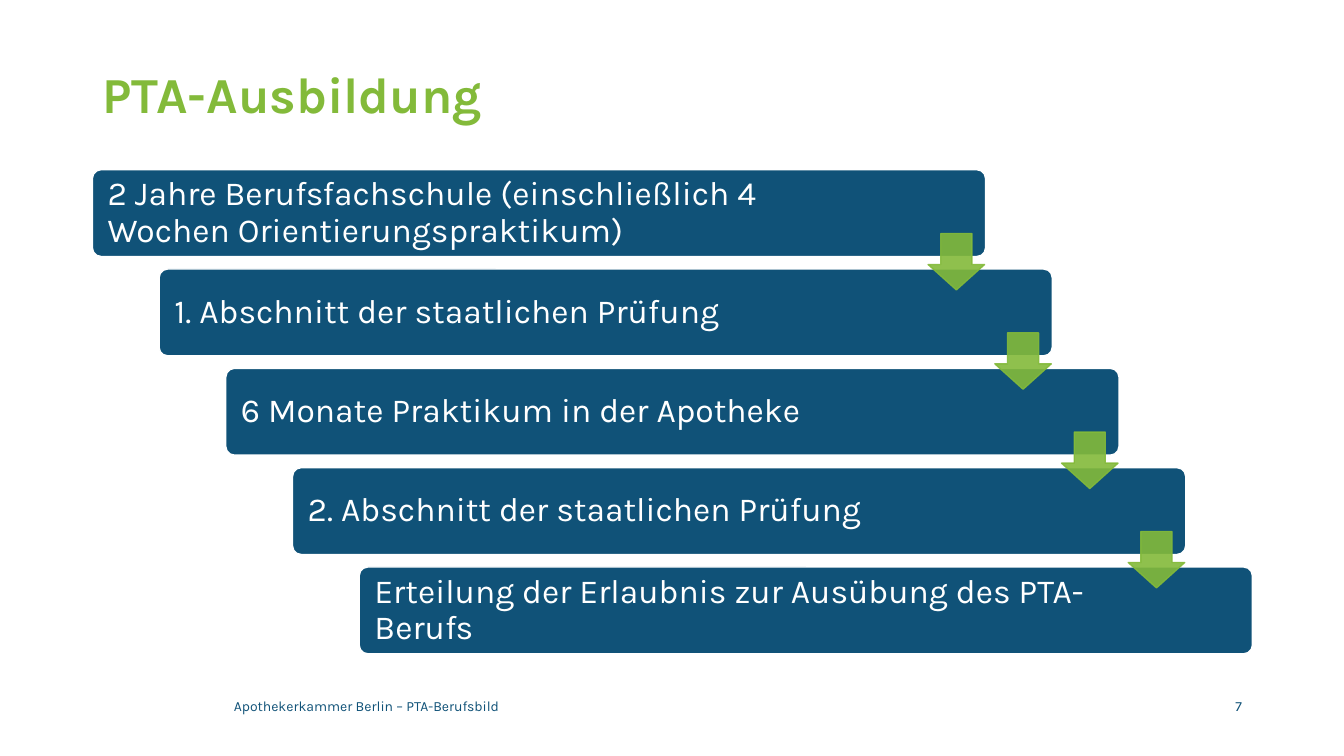
from lxml.etree import SubElement
from pptx import Presentation
from pptx.dml.color import RGBColor
from pptx.enum.shapes import MSO_SHAPE
from pptx.enum.text import MSO_ANCHOR, PP_ALIGN
from pptx.oxml.ns import qn
from pptx.util import Pt

BLUE = RGBColor(0x10, 0x52, 0x78)
GREEN = RGBColor(0x83, 0xBA, 0x3A)
WHITE = RGBColor(0xFF, 0xFF, 0xFF)

STEPS = [
    "2 Jahre Berufsfachschule (einschließlich 4 Wochen Orientierungspraktikum)",
    "1. Abschnitt der staatlichen Prüfung",
    "6 Monate Praktikum in der Apotheke",
    "2. Abschnitt der staatlichen Prüfung",
    "Erteilung der Erlaubnis zur Ausübung des PTA-Berufs",
]
STEP_RIGHT, STEP_DOWN = 47.65, 70.95


def set_all(target, values):
    """Set each named attribute of the target."""
    for name, value in values.items():
        setattr(target, name, value)


def place(shape, left, top, width, height):
    """Move and size a shape, in points."""
    set_all(shape, {"left": Pt(left), "top": Pt(top),
                    "width": Pt(width), "height": Pt(height)})


def write(shape, text, size, color, align=PP_ALIGN.LEFT, spacing=1.0, bold=False):
    """Write one formatted paragraph, vertically centred."""
    frame = shape.text_frame
    set_all(frame, {"word_wrap": True, "vertical_anchor": MSO_ANCHOR.MIDDLE})
    para = frame.paragraphs[0]
    set_all(para, {"alignment": align, "line_spacing": spacing})
    span = para.add_run()
    span.text = text
    set_all(span.font, {"name": "Karla", "size": Pt(size), "bold": bold})
    span.font.color.rgb = color


def add_filled(page, kind, bounds, fill, line, adjustments):
    """Add a preset shape with a solid fill and a thin outline."""
    shape = page.shapes.add_shape(kind, *map(Pt, bounds))
    shape.shadow.inherit = False
    shape.fill.solid()
    shape.fill.fore_color.rgb = fill
    shape.line.color.rgb = line
    shape.line.width = Pt(1)
    for index, value in enumerate(adjustments):
        shape.adjustments[index] = value
    return shape


def add_step(page, index, text):
    """Add one bar of the staircase with its text."""
    bounds = (66 + index * STEP_RIGHT, 121.2 + index * STEP_DOWN, 638, 62)
    bar = add_filled(page, MSO_SHAPE.ROUNDED_RECTANGLE, bounds, BLUE, WHITE, [0.1])
    set_all(bar.text_frame, {"margin_left": Pt(9), "margin_right": Pt(98),
                             "margin_top": Pt(0), "margin_bottom": Pt(0)})
    write(bar, text, 24, WHITE, spacing=0.9)


def add_arrow(page, index):
    """Add the translucent arrow from one bar to the next."""
    bounds = (663 + index * STEP_RIGHT, 166.8 + index * STEP_DOWN, 40.3, 40.3)
    arrow = add_filled(page, MSO_SHAPE.DOWN_ARROW, bounds, GREEN, GREEN, [0.55, 0.45])
    for color in arrow.element.spPr.iter(qn("a:srgbClr")):
        SubElement(color, qn("a:alpha"), val="90000")


def add_note(page, bounds, text, align):
    """Add a small line at the foot of the page."""
    box = page.shapes.add_textbox(*map(Pt, bounds))
    write(box, text, 10, BLUE, align)


def main():
    """Build and save the deck."""
    deck = Presentation()
    set_all(deck, {"slide_width": Pt(960), "slide_height": Pt(540)})
    page = deck.slides.add_slide(deck.slide_layouts[5])
    title = page.shapes.title
    place(title, 66, 28.75, 828, 82)
    write(title, "PTA-Ausbildung", 36, GREEN, spacing=0.9, bold=True)
    for index, text in enumerate(STEPS):
        add_step(page, index, text)
    for index in range(len(STEPS) - 1):
        add_arrow(page, index)
    add_note(page, (160, 489.6, 627, 28.8),
             "Apothekerkammer Berlin – PTA-Berufsbild", PP_ALIGN.LEFT)
    add_note(page, (790.5, 489.6, 103.7, 28.8), "7", PP_ALIGN.RIGHT)
    deck.save("out.pptx")


if __name__ == "__main__":
    main()
